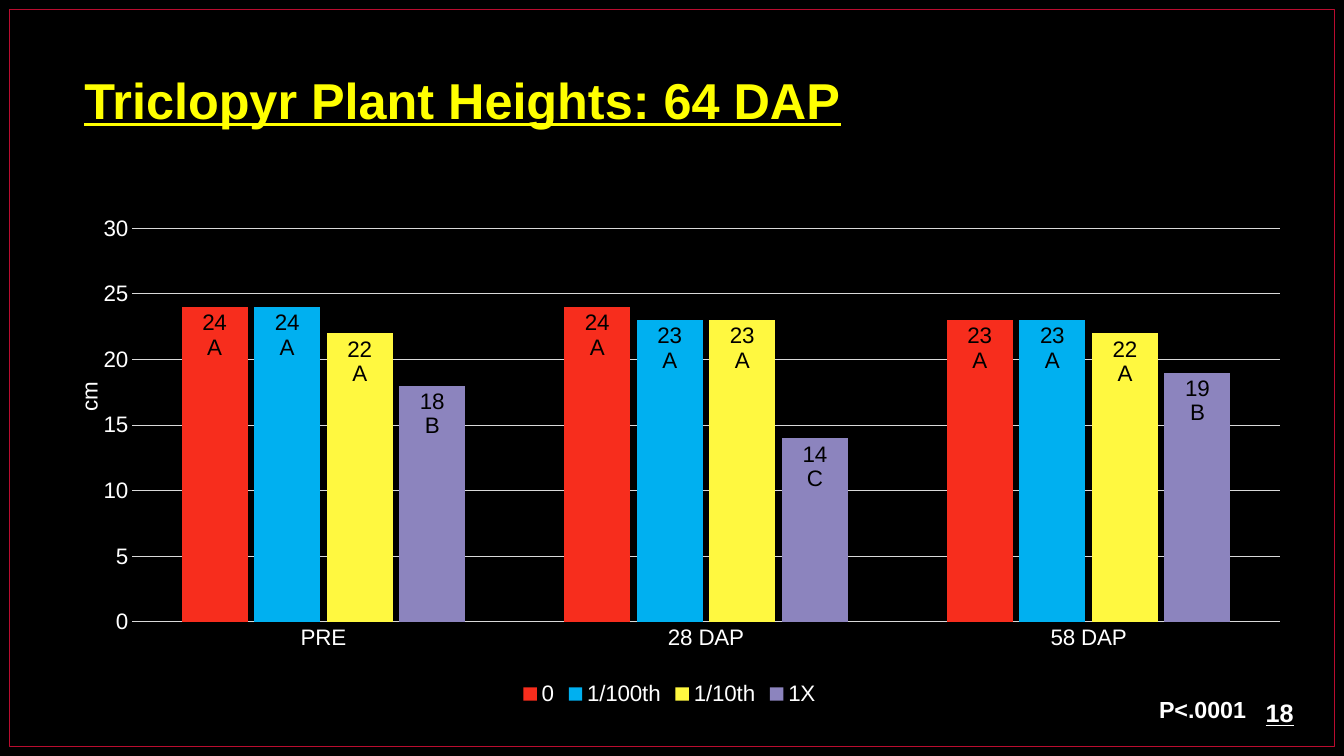
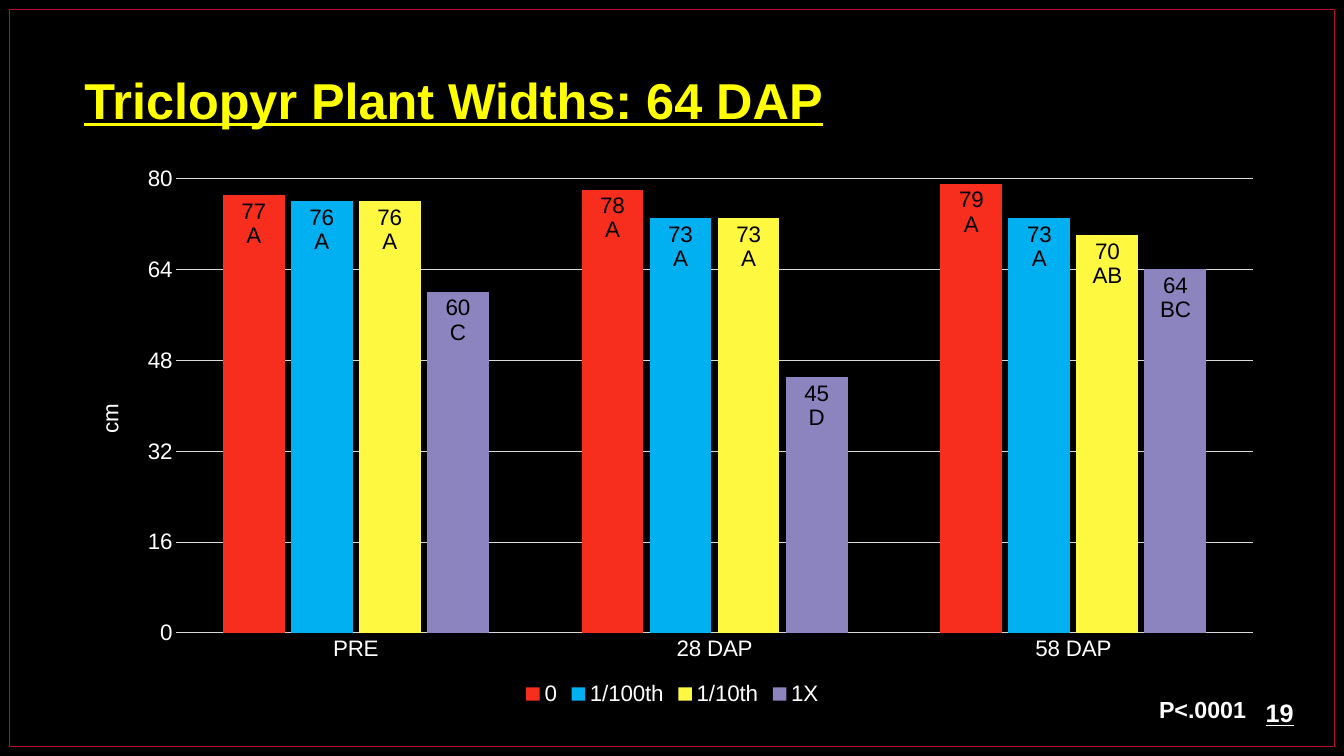
from pptx import Presentation
from pptx.chart.data import CategoryChartData
from pptx.dml.color import RGBColor
from pptx.enum.chart import XL_CHART_TYPE as CT, XL_LABEL_POSITION as LP
from pptx.enum.chart import XL_LEGEND_POSITION as LEG, XL_TICK_MARK as TM
from pptx.enum.shapes import MSO_SHAPE
from pptx.enum.text import MSO_ANCHOR, PP_ALIGN
from pptx.oxml import parse_xml
from pptx.oxml.ns import nsdecls, qn
from pptx.util import Pt

FONT = "Arial"
COLORS = {
    "background": "000000", "frame": "BA0C2F", "title": "FFFF00",
    "text": "FFFFFF", "label": "000000", "grid": "D9D9D9",
}
RATES = {"0": "F72D1D", "1/100th": "00B0F0", "1/10th": "FFF840", "1X": "8C84BE"}
TIMINGS = ["PRE", "28 DAP", "58 DAP"]

SLIDES = [
    {
        "title": "Triclopyr Plant Heights: 64 DAP", "number": "18",
        "box": (42, 111.6, 872.6, 396), "axis": (30, 5),
        "plot": {"x": 0.06, "y": 0.13, "w": 0.94, "h": 0.71},
        "unit": {"x": 0.01, "y": 0.4},
        "rows": [
            [(24, "A"), (24, "A"), (23, "A")],
            [(24, "A"), (23, "A"), (23, "A")],
            [(22, "A"), (23, "A"), (22, "A")],
            [(18, "B"), (14, "C"), (19, "B")],
        ],
    },
    {
        "title": "Triclopyr Plant Widths: 64 DAP", "number": "19",
        "box": (48.2, 111.6, 864, 396), "axis": (80, 16),
        "plot": {"x": 0.09, "y": 0.04, "w": 0.89, "h": 0.82},
        "unit": {"x": 0.02, "y": 0.44},
        "rows": [
            [(77, "A"), (78, "A"), (79, "A")],
            [(76, "A"), (73, "A"), (73, "A")],
            [(76, "A"), (73, "A"), (70, "AB")],
            [(60, "C"), (45, "D"), (64, "BC")],
        ],
    },
]


def rgb(name):
    """Return the colour of a palette name."""
    return RGBColor.from_string(COLORS[name])


def style_font(font, size, color, bold=False, underline=False):
    """Set the face, size, colour and weight of a font."""
    font.name, font.size = FONT, Pt(size)
    font.bold, font.underline = bold, underline
    font.color.rgb = rgb(color)


def add_text(s, box, text, size, color="text", underline=True, align=PP_ALIGN.LEFT):
    """Add one bold line of text, centred vertically in its box."""
    tf = s.shapes.add_textbox(*map(Pt, box)).text_frame
    tf.word_wrap = True
    tf.vertical_anchor = MSO_ANCHOR.MIDDLE
    p = tf.paragraphs[0]
    p.alignment = align
    r = p.add_run()
    r.text = text
    style_font(r.font, size, color, True, underline)


def add_frame(s, box):
    """Paint the background and outline the slide."""
    s.background.fill.solid()
    s.background.fill.fore_color.rgb = rgb("background")
    sp = s.shapes.add_shape(MSO_SHAPE.RECTANGLE, *map(Pt, box))
    sp.shadow.inherit = False
    sp.fill.background()
    sp.line.color.rgb = rgb("frame")
    sp.line.width = Pt(0.75)


def set_layout(parent, index, place, inner=False):
    """Fix the place of a chart part as fractions of the chart."""
    for old in parent.findall(qn("c:layout")):
        parent.remove(old)
    target = '<c:layoutTarget val="inner"/>' if inner else ""
    modes = "".join(f'<c:{k}Mode val="edge"/>' for k in "xy")
    values = "".join(f'<c:{k} val="{v}"/>' for k, v in place.items())
    parent.insert(index, parse_xml(
        f'<c:layout {nsdecls("c")}><c:manualLayout>{target}{modes}{values}'
        '</c:manualLayout></c:layout>'))


def style_line(line):
    """Give an axis or grid line the thin grey style."""
    line.color.rgb = rgb("grid")
    line.width = Pt(0.75)


def style_axes(chart, top, step, unit):
    """Set the scale, grid, tick labels and unit title of both axes."""
    cat, val = chart.category_axis, chart.value_axis
    for axis in (cat, val):
        axis.major_tick_mark = axis.minor_tick_mark = TM.NONE
        style_font(axis.tick_labels.font, 16, "text")
    style_line(cat.format.line)
    val.format.line.fill.background()
    val.minimum_scale, val.maximum_scale, val.major_unit = 0, top, step
    style_line(val.major_gridlines.format.line)
    title = val.axis_title
    r = title.text_frame.paragraphs[0].add_run()
    r.text = "cm"
    style_font(r.font, 16, "text")
    title.element.find(".//" + qn("a:bodyPr")).set("rot", "-5400000")
    set_layout(title.element, 1, unit)


def style_series(series, color, row):
    """Colour a series and label each bar with its value and group letter."""
    series.format.fill.solid()
    series.format.fill.fore_color.rgb = RGBColor.from_string(color)
    series.invert_if_negative = False
    for point, (value, group) in enumerate(row):
        label = series.points[point].data_label
        tf = label.text_frame
        for p, text in ((tf.paragraphs[0], str(value)), (tf.add_paragraph(), group)):
            r = p.add_run()
            r.text = text
            style_font(r.font, 16, "label")
        label.position = LP.INSIDE_END


def add_bar_chart(s, box, rows, axis, plot, unit):
    """Add the clustered columns of application rates by timing."""
    data = CategoryChartData()
    data.categories = TIMINGS
    for rate, row in zip(RATES, rows):
        data.add_series(rate, [value for value, _ in row])
    chart = s.shapes.add_chart(CT.COLUMN_CLUSTERED, *map(Pt, box), data).chart
    chart.has_title = False
    style_font(chart.font, 10, "label")
    chart.has_legend = True
    chart.legend.position = LEG.BOTTOM
    chart.legend.include_in_layout = False
    style_font(chart.legend.font, 16, "text")
    bars = chart.plots[0]
    bars.gap_width, bars.overlap, bars.vary_by_categories = 150, -10, False
    style_axes(chart, *axis, unit)
    for series, color, row in zip(bars.series, RATES.values(), rows):
        style_series(series, color, row)
    set_layout(chart.element.find(".//" + qn("c:plotArea")), 0, plot, inner=True)


def add_chart_slide(prs, title, number, box, rows, axis, plot, unit):
    """Add a slide with a title, a chart, its p-value and the slide number."""
    s = prs.slides.add_slide(prs.slide_layouts[6])
    add_frame(s, (6.5, 6.5, 947, 527))
    add_text(s, (897, 494.6, 45, 29), number, 18)
    add_text(s, (53.3, 44, 859, 53.3), title, 36, "title")
    add_bar_chart(s, box, rows, axis, plot, unit)
    add_text(s, (540.7, 495.5, 356.4, 21.6), "P<.0001", 16.6,
             underline=False, align=PP_ALIGN.RIGHT)


def main():
    """Build and save the presentation."""
    prs = Presentation()
    prs.slide_width, prs.slide_height = Pt(960), Pt(540)
    for content in SLIDES:
        add_chart_slide(prs, **content)
    prs.save("out.pptx")


if __name__ == "__main__":
    main()
